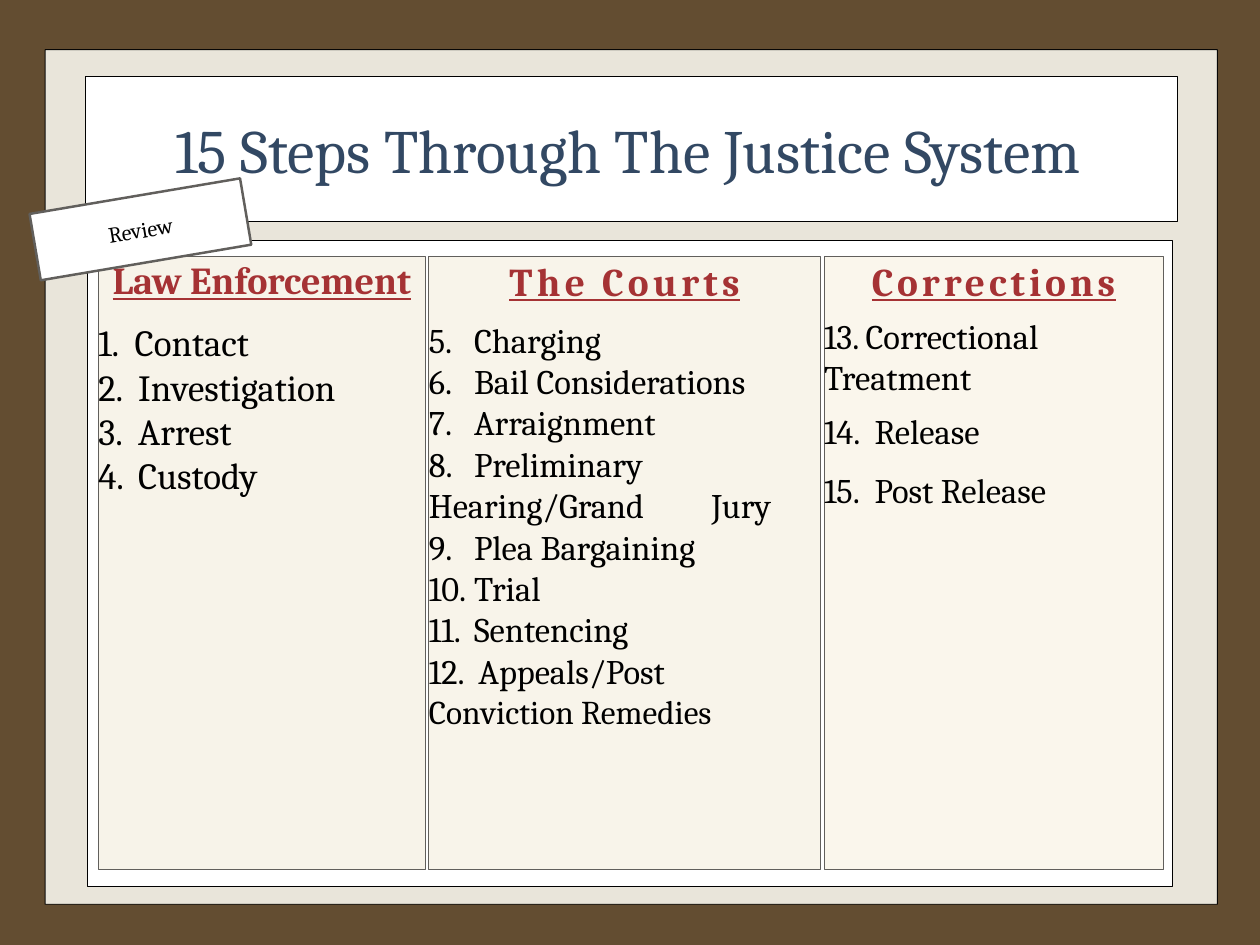
from dataclasses import dataclass

from lxml.etree import SubElement
from pptx import Presentation
from pptx.dml.color import RGBColor
from pptx.enum.shapes import MSO_SHAPE
from pptx.enum.text import MSO_ANCHOR, PP_ALIGN
from pptx.oxml.ns import qn
from pptx.util import Inches, Pt


@dataclass(frozen=True)
class Theme:
    font: str = "Cambria"
    background: str = "634D31"
    panel: str = "F2EFE5"
    white: str = "FFFFFF"
    black: str = "000000"
    border: str = "615F5C"
    title: str = "324863"
    heading: str = "A53234"
    title_size: int = 50
    label_size: int = 18


def rgb(value):
    return RGBColor.from_string(value)


def add_text(p, text, size, color, font=Theme.font, bold=False,
             underline=False, spacing=0):
    r = p.add_run()
    r.text = text
    f = r.font
    f.name, f.size, f.bold, f.underline = font, Pt(size), bold, underline
    f.color.rgb = rgb(color)
    if spacing:
        r._r.get_or_add_rPr().set("spc", str(round(spacing * 100)))


def add_tabs(p, stops):
    """Set left tab stops, in inches."""
    tabs = SubElement(p._p.get_or_add_pPr(), qn("a:tabLst"))
    for stop in stops:
        SubElement(tabs, qn("a:tab"), pos=str(Inches(stop)), algn="l")


def set_alpha(sp, percent):
    for color in sp._element.spPr.iter(qn("a:srgbClr")):
        SubElement(color, qn("a:alpha"), val=str(percent * 1000))


class SlideBuilder:
    def __init__(self, slide, theme):
        self.slide, self.theme = slide, theme
        fill = slide.background.fill
        fill.solid()
        fill.fore_color.rgb = rgb(theme.background)

    def frame(self, tf, inset=0, anchor=MSO_ANCHOR.TOP, wrap=True):
        tf.margin_left = tf.margin_right = Inches(inset)
        tf.margin_top = tf.margin_bottom = Inches(inset)
        tf.vertical_anchor, tf.word_wrap = anchor, wrap
        return tf

    def box(self, left, top, width, height, fill, line, weight=0.75):
        sp = self.slide.shapes.add_shape(
            MSO_SHAPE.RECTANGLE, Inches(left), Inches(top), Inches(width), Inches(height))
        sp.shadow.inherit = False
        sp.fill.solid()
        sp.fill.fore_color.rgb = rgb(fill)
        sp.line.color.rgb = rgb(line)
        sp.line.width = Pt(weight)
        return sp

    def title(self, text, left, top, width, height):
        sp = self.slide.shapes.add_textbox(
            Inches(left), Inches(top), Inches(width), Inches(height))
        p = self.frame(sp.text_frame, 0.06, MSO_ANCHOR.MIDDLE, False).paragraphs[0]
        p.alignment = PP_ALIGN.CENTER
        add_text(p, text, self.theme.title_size, self.theme.title)

    def label(self, text, left, top, width, height, rotation):
        sp = self.box(left, top, width, height, self.theme.white, self.theme.border, 2)
        sp.rotation = rotation
        p = self.frame(sp.text_frame, anchor=MSO_ANCHOR.MIDDLE).paragraphs[0]
        p.alignment = PP_ALIGN.CENTER
        add_text(p, text, self.theme.label_size, self.theme.black)

    def column(self, left, top, height, col):
        sp = self.box(left, top, col.width, height, col.fill, self.theme.border)
        tf = self.frame(sp.text_frame)
        p = tf.paragraphs[0]
        p.alignment = PP_ALIGN.CENTER
        add_text(p, col.heading, col.heading_size, self.theme.heading,
                 bold=True, underline=True, spacing=col.spacing)
        for i, step in enumerate(col.steps):
            p = tf.add_paragraph()
            add_tabs(p, step.tabs or col.tabs)
            p.alignment = PP_ALIGN.LEFT
            p.space_before = Pt(col.before[i] if i < len(col.before) else 0)
            first, *rest = step.lines
            add_text(p, f"{col.first + i}.\t{first}", col.size, self.theme.black)
            for line in rest:
                p.add_line_break()
                add_text(p, line, step.rest_size or col.size, self.theme.black)


class Step:
    def __init__(self, *lines, tabs=(), rest_size=None):
        self.lines, self.tabs, self.rest_size = lines, tabs, rest_size


@dataclass
class Column:
    heading: str
    width: float
    fill: str
    heading_size: int
    spacing: float
    size: int
    first: int
    tabs: tuple
    before: tuple
    steps: list


COLUMNS = [
    Column("Law Enforcement", 3.69, "F7F3E9", 31, 0, 30, 1, (0.45,), (14,), [
        Step("Contact", tabs=(0.41,)), Step("Investigation"),
        Step("Arrest"), Step("Custody")]),
    Column("The Courts", 4.42, "F8F4EA", 32, 3.5, 28, 5, (0.51,), (12,), [
        Step("Charging"), Step("Bail Considerations"), Step("Arraignment"),
        Step("Preliminary", "Hearing/Grand\tJury", tabs=(0.51, 3.19)),
        Step("Plea Bargaining"), Step("Trial"), Step("Sentencing"),
        Step("Appeals/Post", "Conviction Remedies", tabs=(0.56,), rest_size=27)]),
    Column("Corrections", 3.83, "FAF6EC", 32, 3.2, 28, 13, (0.57,), (9, 10, 14), [
        Step("Correctional", "Treatment", tabs=(0.47,)),
        Step("Release"), Step("Post Release")]),
]


def main():
    prs = Presentation()
    prs.slide_width, prs.slide_height = Inches(14.22), Inches(10.67)
    theme = Theme()
    s = SlideBuilder(prs.slides.add_slide(prs.slide_layouts[6]), theme)

    panel = s.box(0.51, 0.56, 13.23, 9.65, theme.panel, theme.black)
    set_alpha(panel, 94)
    s.box(0.96, 0.86, 12.33, 1.64, theme.white, theme.black)
    s.box(0.99, 2.72, 12.24, 7.29, theme.white, theme.black)
    s.title("15 Steps Through The Justice System", 1.22, 1.17, 11.74, 1.03)

    left, gap = 1.11, 0.04
    for col in COLUMNS:
        s.column(left, 2.9, 6.92, col)
        left += col.width + gap
    s.label("Review", 0.38, 2.21, 2.41, 0.76, 350.4)

    prs.save("out.pptx")


if __name__ == "__main__":
    main()
